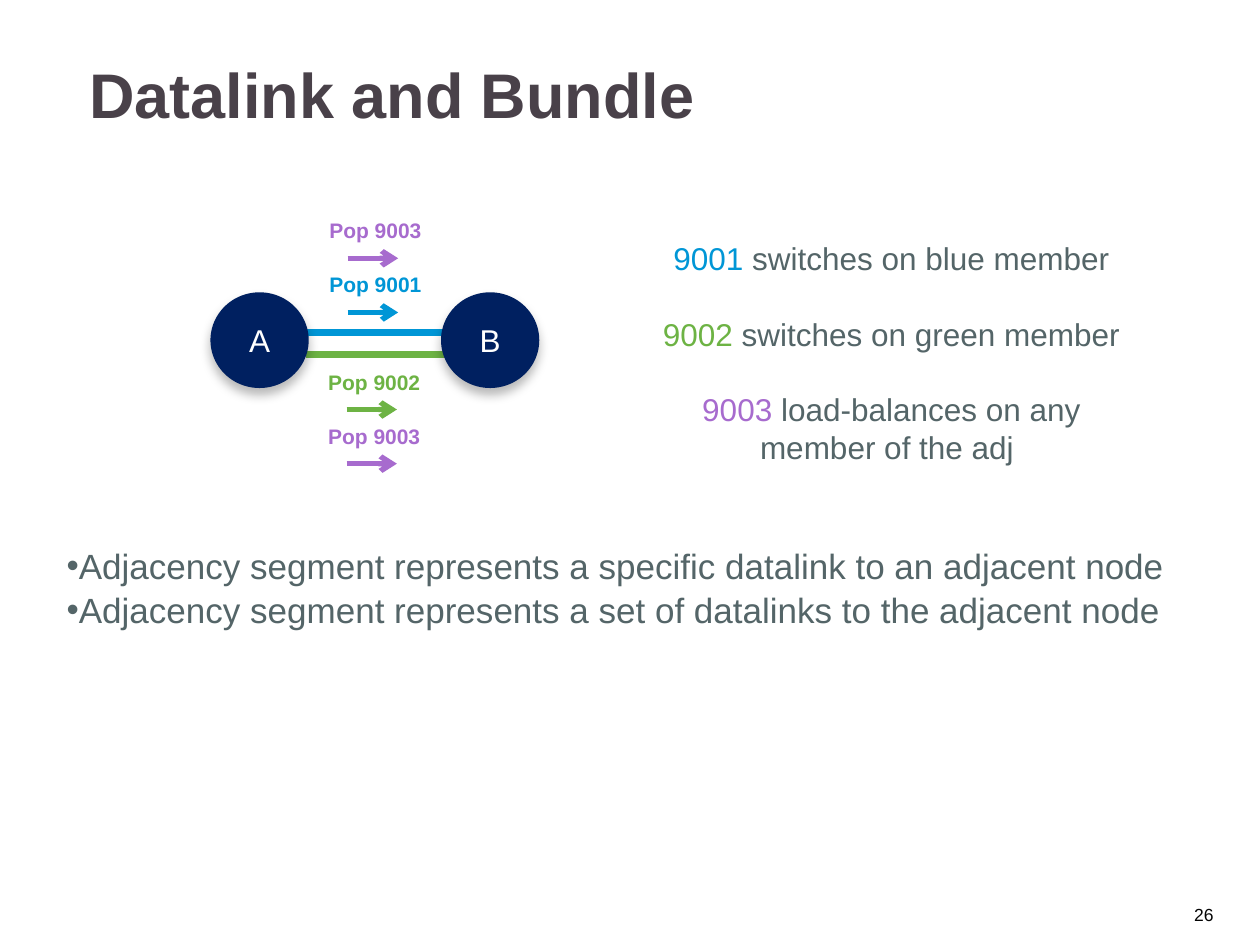
from lxml.etree import SubElement
from pptx import Presentation
from pptx.dml.color import RGBColor
from pptx.enum.shapes import MSO_CONNECTOR, MSO_SHAPE
from pptx.enum.text import MSO_ANCHOR as Anchor, PP_ALIGN as Align
from pptx.oxml.ns import qn
from pptx.util import Inches, Pt

BLUE, GREEN, PURPLE = "0096D6", "6DB344", "A76BCE"
GREY, NAVY, WHITE = "546568", "002060", "FFFFFF"


def rgb(value):
    return RGBColor.from_string(value)


def set_attrs(obj, values):
    for name, value in values.items():
        setattr(obj, name, value)


def write(tf, paragraphs, size, bold=False, **fmt):
    for i, runs in enumerate(paragraphs):
        p = tf.add_paragraph() if i else tf.paragraphs[0]
        set_attrs(p, fmt)
        if i == 0:
            p.space_before = Pt(0)
        for text, color in runs:
            r = p.add_run()
            r.text = text
            set_attrs(r.font, {"name": "Arial", "size": Pt(size), "bold": bold})
            r.font.color.rgb = rgb(color)


def add_text(shapes, box, paragraphs, size, anchor=Anchor.TOP, **fmt):
    tf = shapes.add_textbox(*map(Inches, box)).text_frame
    set_attrs(tf, {"word_wrap": True, "vertical_anchor": anchor})
    write(tf, paragraphs, size, **fmt)
    return tf


def add_bullets(tf):
    for p in tf.paragraphs:
        props = p._p.get_or_add_pPr()
        SubElement(props, qn("a:buFont"), typeface="Arial")
        SubElement(props, qn("a:buChar"), char="•")


def add_line(shapes, x1, x2, y, color, width, arrow=False):
    ends = map(Inches, (x1, y, x2, y))
    line = shapes.add_connector(MSO_CONNECTOR.STRAIGHT, *ends)
    line.line.color.rgb = rgb(color)
    line.line.width = Pt(width)
    if arrow:
        SubElement(line.line._get_or_add_ln(), qn("a:tailEnd"), type="arrow")
    SubElement(line._element.spPr, qn("a:effectLst"))


def add_pop(shapes, left, top, label, color):
    group = shapes.add_group_shape().shapes
    add_line(group, left + 0.55, left + 0.95, top + 0.37, color, 3, arrow=True)
    add_text(group, (left, top, 1.54, 0.3), [[(label, color)]], 12,
             bold=True, alignment=Align.CENTER)


def add_node(shapes, left, name):
    box = map(Inches, (left, 2.32, 0.78, 0.76))
    sp = shapes.add_shape(MSO_SHAPE.OVAL, *box)
    sp.fill.solid()
    sp.fill.fore_color.rgb = rgb(NAVY)
    sp.line.fill.background()
    effects = SubElement(sp._element.spPr, qn("a:effectLst"))
    shadow = SubElement(effects, qn("a:outerShdw"), blurRad=str(Pt(6)),
                        dist=str(Pt(4)), dir="5400000", rotWithShape="0")
    color = SubElement(shadow, qn("a:srgbClr"), val="000000")
    SubElement(color, qn("a:alpha"), val="27000")
    sp.text_frame.vertical_anchor = Anchor.MIDDLE
    write(sp.text_frame, [[(name, WHITE)]], 18, alignment=Align.CENTER)


def main():
    prs = Presentation()
    set_attrs(prs, {"slide_width": Inches(10), "slide_height": Inches(7.5)})
    shapes = prs.slides.add_slide(prs.slide_layouts[6]).shapes

    add_text(shapes, (9.13, 7.13, 0.6, 0.26), [[("26", "040404")]], 10,
             anchor=Anchor.BOTTOM, alignment=Align.RIGHT)
    add_text(shapes, (0.61, 0.51, 9.39, 0.92), [[("Datalink and Bundle", "494149")]],
             36, bold=True, line_spacing=0.8)

    points = ("a specific datalink to an adjacent node",
              "a set of datalinks to the adjacent node")
    body = add_text(shapes, (0.43, 4.27, 9.57, 2.62),
                    [[(f"Adjacency segment represents {point}", GREY)] for point in points],
                    20, space_before=Pt(1))
    add_bullets(body)

    rules = (("9001", BLUE, " switches on blue member"),
             ("9002", GREEN, " switches on green member"),
             ("9003", PURPLE, " load-balances on any member of the adj "))
    add_text(shapes, (5.16, 1.85, 3.83, 1.92),
             [[(label, color), (text, GREY)] for label, color, text in rules],
             18, alignment=Align.CENTER, space_before=Pt(21.5))

    for y, color in ((2.64, BLUE), (2.81, GREEN)):
        add_line(shapes, 2.43, 3.53, y, color, 4)
    for left, top, label, color in ((2.21, 1.68, "Pop 9003", PURPLE),
                                    (2.21, 2.11, "Pop 9001", BLUE),
                                    (2.2, 2.88, "Pop 9002", GREEN),
                                    (2.2, 3.31, "Pop 9003", PURPLE)):
        add_pop(shapes, left, top, label, color)
    for left, name in ((3.5, "B"), (1.67, "A")):
        add_node(shapes, left, name)

    prs.save("out.pptx")


if __name__ == "__main__":
    main()
